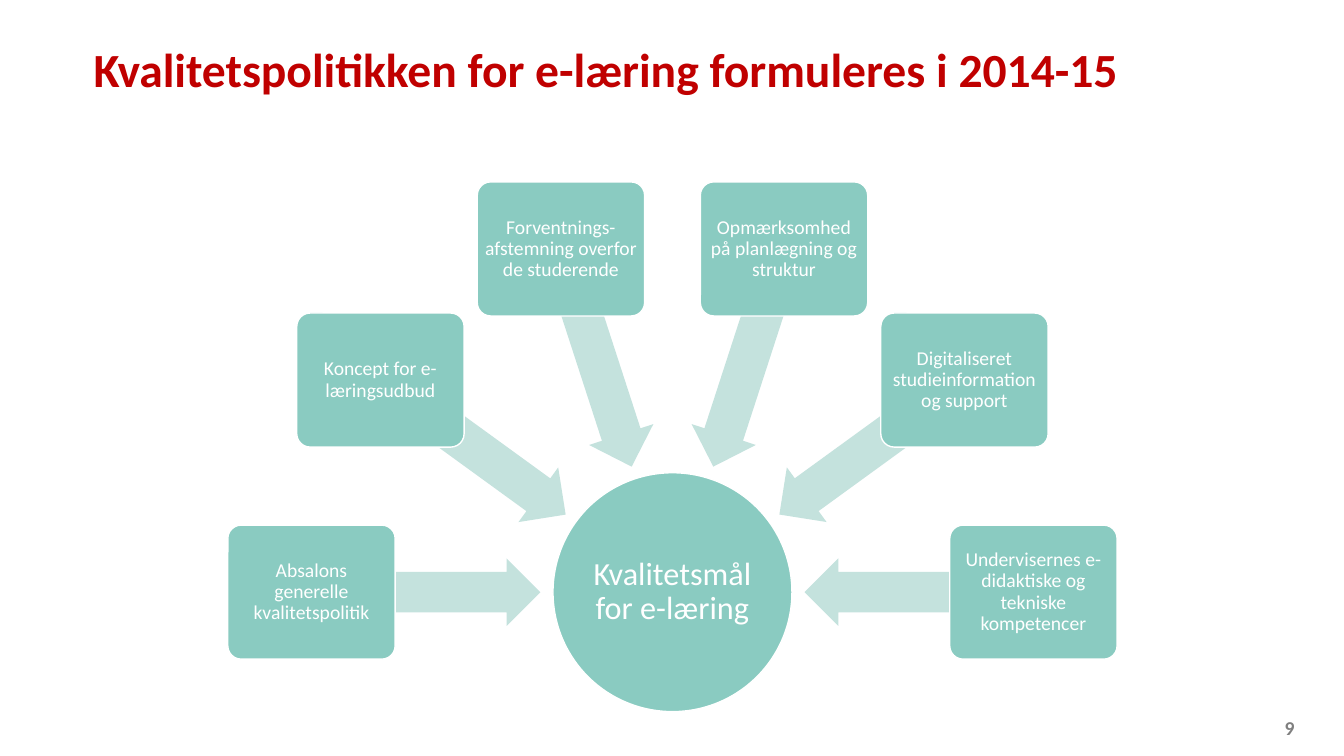
from math import cos, radians, sin

from pptx import Presentation
from pptx.dml.color import RGBColor
from pptx.enum.shapes import MSO_SHAPE as Shape
from pptx.enum.text import MSO_ANCHOR as Anchor, PP_ALIGN as Align
from pptx.util import Inches, Pt

TEAL = "8ACBC1"
PALE_TEAL = "C4E2DD"
WHITE = "FFFFFF"
HUB_X, HUB_Y = 6.67, 5.875
HUB_SIZE = 2.37
BOX_RADIUS, ARROW_RADIUS = 3.58, 2.445
BOX_WIDTH, BOX_HEIGHT = 1.66, 1.33
ARROW_WIDTH, ARROW_HEIGHT = 2.27, 0.67
TOPICS = [
    "Absalons\vgenerelle kvalitetspolitik",
    "Koncept for e-læringsudbud",
    "Forventnings-afstemning overfor de studerende",
    "Opmærksomhed på planlægning og struktur",
    "Digitaliseret studieinformation og support",
    "Undervisernes e-didaktiske og tekniske kompetencer",
]


def color(value):
    return RGBColor.from_string(value)


def write(box, text, size, ink=WHITE, bold=False, align=Align.CENTER,
          anchor=Anchor.MIDDLE, inset=0.03, line_spacing=0.9):
    frame = box.text_frame
    frame.word_wrap = True
    frame.vertical_anchor = anchor
    frame.margin_left = frame.margin_right = Inches(inset)
    frame.margin_top = frame.margin_bottom = Inches(inset)
    para = frame.paragraphs[0]
    para.alignment = align
    para.line_spacing = line_spacing
    para.text = text
    for span in para.runs:
        span.font.name = "Calibri"
        span.font.size = Pt(size)
        span.font.bold = bold
        span.font.color.rgb = color(ink)


def add_label(page, left, top, width, height, text, size, **style):
    box = page.shapes.add_textbox(
        Inches(left), Inches(top), Inches(width), Inches(height))
    write(box, text, size, **style)


def add_centered(page, kind, x, y, width, height, fill, outline=None):
    shape = page.shapes.add_shape(
        kind, Inches(x - width / 2), Inches(y - height / 2),
        Inches(width), Inches(height))
    shape.shadow.inherit = False
    shape.fill.solid()
    shape.fill.fore_color.rgb = color(fill)
    if outline:
        shape.line.color.rgb = color(outline)
        shape.line.width = Pt(1)
    else:
        shape.line.fill.background()
    return shape


def around_hub(radius, angle):
    turn = radians(angle)
    return HUB_X + radius * cos(turn), HUB_Y + radius * sin(turn)


def add_hub(page, text):
    hub = add_centered(page, Shape.OVAL, HUB_X, HUB_Y,
                       HUB_SIZE, HUB_SIZE, TEAL, WHITE)
    write(hub, text, 23, inset=0.02)


def add_topic(page, text, angle):
    arrow = add_centered(page, Shape.LEFT_ARROW, *around_hub(ARROW_RADIUS, angle),
                         ARROW_WIDTH, ARROW_HEIGHT, PALE_TEAL)
    arrow.adjustments[0] = 0.6
    arrow.adjustments[1] = 0.5
    arrow.rotation = angle % 360
    box = add_centered(page, Shape.ROUNDED_RECTANGLE, *around_hub(BOX_RADIUS, angle),
                       BOX_WIDTH, BOX_HEIGHT, TEAL, WHITE)
    box.adjustments[0] = 0.1
    write(box, text, 14)


def main():
    deck = Presentation()
    deck.slide_width, deck.slide_height = Inches(13.33), Inches(7.5)
    page = deck.slides.add_slide(deck.slide_layouts[6])
    add_label(page, 0.83, 0.21, 10.8, 1.02,
              "Kvalitetspolitikken for e-læring formuleres i 2014-15", 34,
              ink="C00000", bold=True, align=Align.LEFT, inset=0.1,
              line_spacing=0.88)
    add_label(page, 12.41, 7.14, 0.43, 0.2, "9", 14, ink="7F7F7F", bold=True,
              align=Align.RIGHT, anchor=Anchor.BOTTOM, inset=0, line_spacing=1.0)
    add_hub(page, "Kvalitetsmål for e-læring")
    step = 180 / (len(TOPICS) - 1)
    for index, topic in enumerate(TOPICS):
        add_topic(page, topic, 180 + index * step)
    deck.save("out.pptx")


if __name__ == "__main__":
    main()
